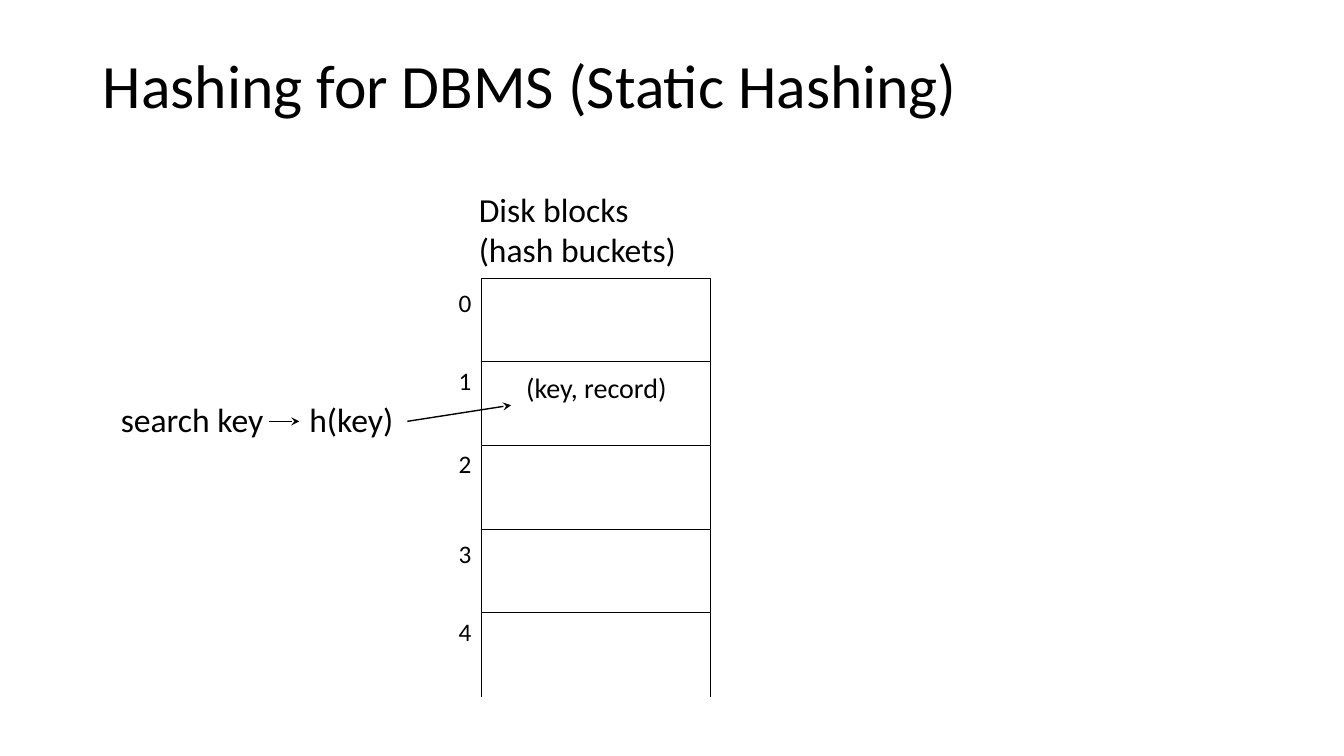
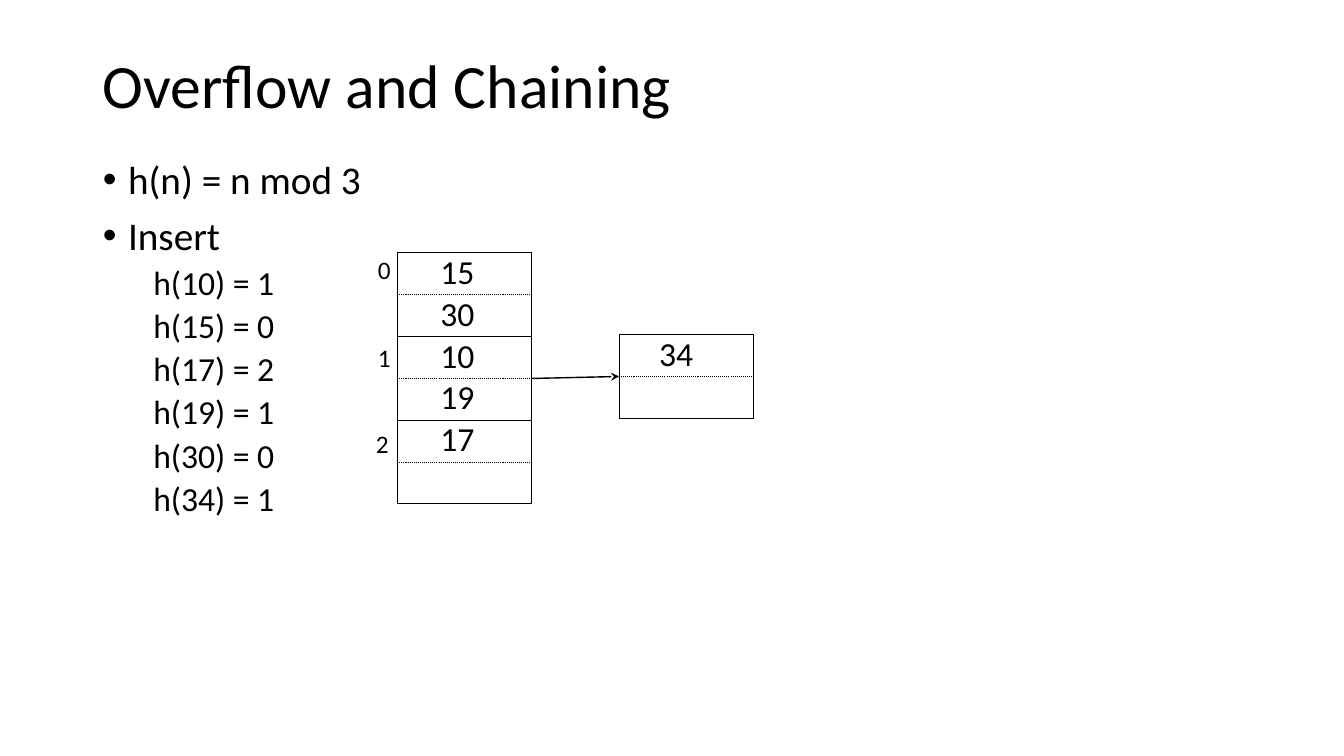
from dataclasses import dataclass

from pptx import Presentation
from pptx.dml.color import RGBColor
from pptx.enum.dml import MSO_LINE
from pptx.enum.shapes import MSO_CONNECTOR, MSO_SHAPE
from pptx.enum.text import MSO_ANCHOR, MSO_AUTO_SIZE, PP_ALIGN
from pptx.oxml.ns import qn
from pptx.util import Emu, Pt
from lxml.etree import SubElement


@dataclass(frozen=True)
class Theme:
    font: str = "Calibri"
    ink: RGBColor = RGBColor(0, 0, 0)
    paper: RGBColor = RGBColor(255, 255, 255)
    title: int = 44
    body: int = 28
    text: int = 24
    entry: int = 20
    index: int = 18
    outline: float = 0.75
    arrow: float = 1


THEME = Theme()
EMU_PER_PX = 9144  # 100 px to the inch
TITLE_ONLY, TITLE_AND_BODY = 5, 1
TOP, LEFT, BOTTOM, RIGHT = range(4)
BUCKET_H = 83


def px(length):
    return Emu(round(length * EMU_PER_PX))


def box_px(*lengths):
    return [px(length) for length in lengths]


# Text
def write(frame, text, size=THEME.text, align=PP_ALIGN.LEFT,
          anchor=MSO_ANCHOR.TOP, spacing=None, insets=(10, 5, 10, 5)):
    """Fill a text frame, one paragraph per line; insets run left to bottom."""
    frame.text = text
    frame.word_wrap = True
    frame.auto_size = MSO_AUTO_SIZE.NONE
    frame.vertical_anchor = anchor
    (frame.margin_left, frame.margin_top,
     frame.margin_right, frame.margin_bottom) = box_px(*insets)
    for paragraph in frame.paragraphs:
        paragraph.alignment = align
        paragraph.line_spacing = spacing
        for run in paragraph.runs:
            run.font.name = THEME.font
            run.font.size = Pt(size)
            run.font.color.rgb = THEME.ink


def add_label(slide, box, text, **style):
    label = slide.shapes.add_textbox(*box_px(*box))
    write(label.text_frame, text, **style)
    return label


# Boxes and lines
def add_bucket(slide, box):
    bucket = slide.shapes.add_shape(MSO_SHAPE.RECTANGLE, *box_px(*box))
    bucket.shadow.inherit = False
    bucket.fill.solid()
    bucket.fill.fore_color.rgb = THEME.paper
    bucket.line.color.rgb = THEME.ink
    bucket.line.width = Pt(THEME.outline)
    return bucket


def add_line(slide, start=(0, 0), end=(0, 0), width=THEME.outline, dash=None):
    line = slide.shapes.add_connector(
        MSO_CONNECTOR.STRAIGHT, *box_px(*start, *end))
    line.line.color.rgb = THEME.ink
    line.line.width = Pt(width)
    if dash:
        line.line.dash_style = dash
    SubElement(line._element.spPr, qn("a:effectLst"))
    return line


def add_arrow(slide, source, target=None, end=(0, 0)):
    """Arrow from the right side of source to the left of target, or to a point."""
    arrow = add_line(slide, end=end, width=THEME.arrow)
    arrow.begin_connect(source, RIGHT)
    if target is not None:
        arrow.end_connect(target, LEFT)
    SubElement(arrow.line._get_or_add_ln(), qn("a:tailEnd"), type="stealth")


# Title and list
def add_titled_slide(deck, layout, title):
    slide = deck.slides.add_slide(deck.slide_layouts[layout])
    heading = slide.shapes.title
    heading.left, heading.top, heading.width, heading.height = box_px(
        92, 33, 1150, 109)
    write(heading.text_frame, title, size=THEME.title,
          anchor=MSO_ANCHOR.MIDDLE, spacing=0.9)
    return slide


def fill_list(slide, box, points, details):
    """Bulleted points, then indented details without bullets."""
    body = slide.placeholders[1]
    body.left, body.top, body.width, body.height = box_px(*box)
    write(body.text_frame, "\n".join(points + details),
          size=THEME.body, spacing=0.9)
    for number, paragraph in enumerate(body.text_frame.paragraphs):
        is_detail = number >= len(points)
        paragraph.space_before = Pt(5 if is_detail else 10)
        paragraph.space_after = Pt(0)
        properties = paragraph._p.get_or_add_pPr()
        properties.set("marL", str(px(50 if is_detail else 25)))
        properties.set("indent", str(px(0 if is_detail else -25)))
        if is_detail:
            paragraph.level = 1
            paragraph.runs[0].font.size = Pt(THEME.text)
            SubElement(properties, qn("a:buNone"))
        else:
            SubElement(properties, qn("a:buChar"), char="•")


# Bucket regions
def add_indexes(slide, positions):
    for index, (left, top) in enumerate(positions):
        add_label(slide, (left, top, 34, 40), str(index), size=THEME.index)


def add_disk_blocks(slide, left, top, width, closed):
    """Stack of closed buckets with an open one below; returns the buckets."""
    buckets = [add_bucket(slide, (left, top + row * BUCKET_H, width, BUCKET_H))
               for row in range(closed)]
    open_top = top + closed * BUCKET_H
    for side in (left, left + width):
        add_line(slide, (side, open_top), (side, open_top + BUCKET_H))
    add_label(slide, (left - 13, top - 94, width + 25, 91),
              "Disk blocks\n(hash buckets)")
    add_indexes(slide, [(left - 33, top + drop)
                        for drop in (4, 82, 164, 253, 331)])
    return buckets


def add_split_bucket(slide, left, top, values, inset=33):
    """Bucket with two slots, divided by a dotted line."""
    width, slot = 133, BUCKET_H / 2
    bucket = add_bucket(slide, (left, top, width, BUCKET_H))
    add_line(slide, (left, top + slot), (left + width, top + slot),
             dash=MSO_LINE.ROUND_DOT)
    for row, value in enumerate(values):
        add_label(slide, (left + inset, top - 7 + row * slot, 60, 50),
                  str(value))
    return bucket


def add_chain(slide, left, top):
    """Three hash buckets, the middle one chained to an overflow bucket."""
    contents = [(15, 30), (10, 19), (17,)]
    buckets = [add_split_bucket(slide, left, top + row * BUCKET_H, values)
               for row, values in enumerate(contents)]
    overflow = add_split_bucket(slide, left + 220, top + BUCKET_H - 2,
                                (34,), inset=30)
    add_arrow(slide, buckets[1], overflow)
    add_indexes(slide, [(left - 29, top - 4), (left - 29, top + 84),
                        (left - 31, top + 169)])


# Slides
def build_static_hashing(deck):
    slide = add_titled_slide(deck, TITLE_ONLY,
                             "Hashing for DBMS (Static Hashing)")
    buckets = add_disk_blocks(slide, 478, 276, 227, closed=4)
    write(buckets[1].text_frame, "(key, record)", size=THEME.entry,
          align=PP_ALIGN.CENTER, insets=(10, 9, 10, 5))
    search_key = add_label(slide, (110, 391, 157, 54), "search key",
                           insets=(10, 5, 0, 5))
    hash_value = add_label(slide, (297, 391, 107, 54), "h(key)")
    add_arrow(slide, search_key, hash_value)
    add_arrow(slide, hash_value, end=(507, 402))


def build_chaining(deck):
    slide = add_titled_slide(deck, TITLE_AND_BODY, "Overflow and Chaining")
    inserted = (10, 15, 17, 19, 30, 34)
    fill_list(slide, (92, 154, 1150, 522), ["h(n) = n mod 3", "Insert"],
              [f"h({key}) = {key % 3}" for key in inserted])
    add_chain(slide, 394, 251)


def main():
    deck = Presentation()
    deck.slide_width, deck.slide_height = box_px(1333, 750)
    build_static_hashing(deck)
    build_chaining(deck)
    deck.save("out.pptx")


if __name__ == "__main__":
    main()
